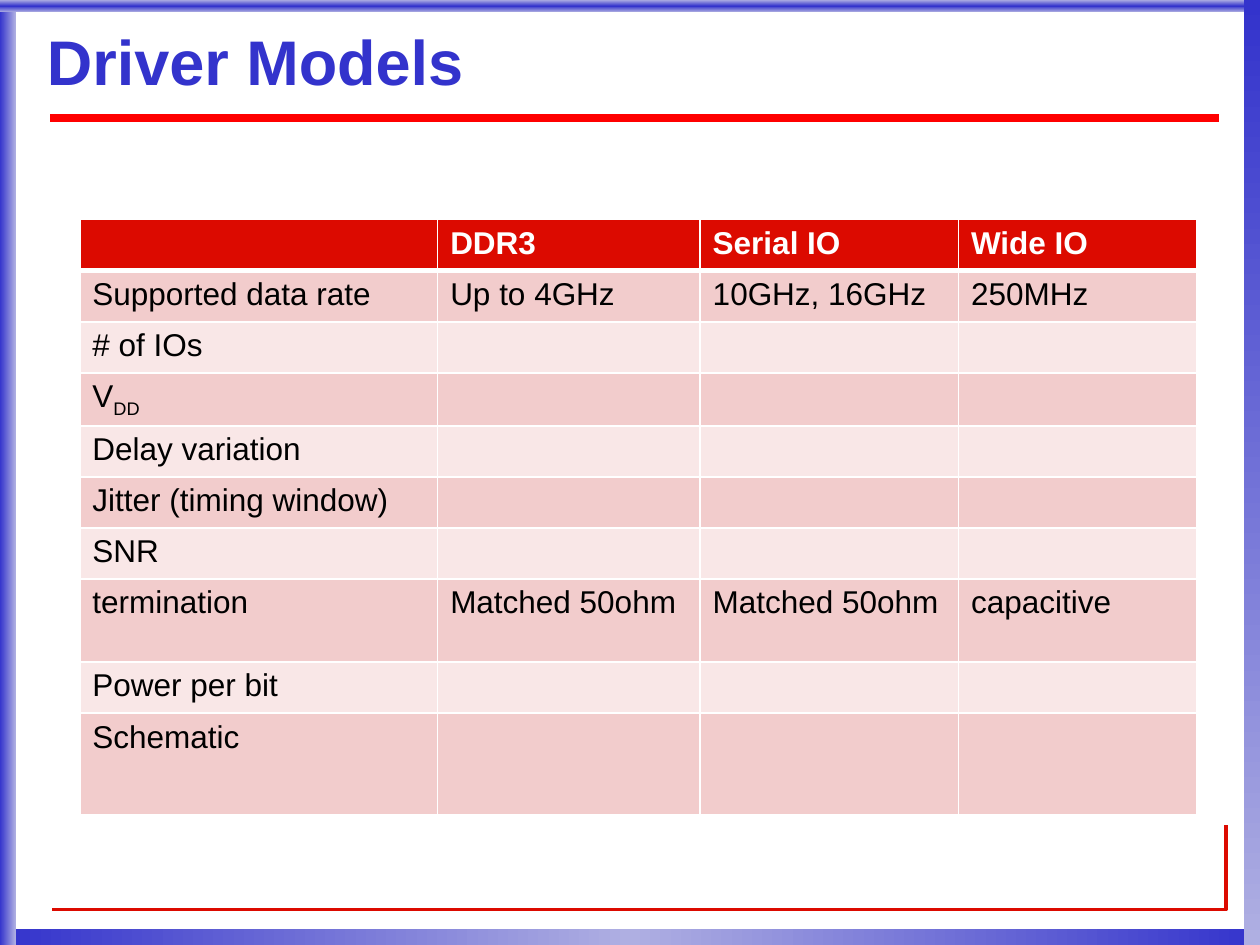
from typing import NamedTuple

from lxml.etree import SubElement
from pptx import Presentation
from pptx.dml.color import RGBColor
from pptx.enum.shapes import MSO_CONNECTOR, MSO_SHAPE
from pptx.enum.text import MSO_ANCHOR, PP_ALIGN
from pptx.oxml import parse_xml
from pptx.oxml.ns import nsdecls, qn
from pptx.util import Pt

COLORS = {
    "blue": "3333CC", "pale": "AFAFE2", "rule": "FF0000", "red": "DC0A00",
    "dark_band": "F2CCCC", "light_band": "F9E7E7",
    "white": "FFFFFF", "black": "000000", "shadow": "B2B2B2",
}
FONT = "Arial"
WIDTH, HEIGHT = 720, 540


class Bar(NamedTuple):
    left: float
    top: float
    width: float
    height: float
    stops: tuple[str, ...]
    angle: int  # counter-clockwise degrees


class Row(NamedTuple):
    texts: tuple[str, ...]  # an underscore starts a subscript
    height: float = 29.2


BARS = [
    Bar(0, 531, WIDTH, 9, ("blue", "pale", "blue"), 0),
    Bar(0, 0, 9, HEIGHT, ("blue", "pale"), 0),
    Bar(0, 0, WIDTH, 7, ("pale", "blue", "pale"), 270),
    Bar(711, 0, 9, HEIGHT, ("blue", "pale"), 270),
]
COLUMN_WIDTHS = [204.5, 150, 147.6, 136.3]
ROWS = [
    Row(("", "DDR3", "Serial IO", "Wide IO")),
    Row(("Supported data rate", "Up to 4GHz", "10GHz, 16GHz", "250MHz")),
    Row(("# of IOs",)),
    Row(("V_DD",)),
    Row(("Delay variation",)),
    Row(("Jitter (timing window)",)),
    Row(("SNR",)),
    Row(("termination", "Matched 50ohm", "Matched 50ohm", "capacitive"), 47.4),
    Row(("Power per bit",)),
    Row(("Schematic",), 58.3),
]


def rgb(name: str) -> RGBColor:
    return RGBColor.from_string(COLORS[name])


def format_run(run, size: float, color: str, bold: bool) -> None:
    run.font.name = FONT
    run.font.size = Pt(size)
    run.font.bold = bold
    run.font.color.rgb = rgb(color)


def draw_bar(slide, bar: Bar) -> None:
    shape = slide.shapes.add_shape(
        MSO_SHAPE.RECTANGLE, Pt(bar.left), Pt(bar.top), Pt(bar.width), Pt(bar.height))
    shape.shadow.inherit = False
    shape.line.fill.background()
    shape.fill.gradient()
    shape.fill.gradient_angle = bar.angle
    stop_list = shape._element.spPr.find(qn("a:gradFill")).find(qn("a:gsLst"))
    for stop in list(stop_list):
        stop_list.remove(stop)
    for index, color in enumerate(bar.stops):
        position = 100000 * index // (len(bar.stops) - 1)
        stop = SubElement(stop_list, qn("a:gs"), pos=str(position))
        SubElement(stop, qn("a:srgbClr"), val=COLORS[color])


def draw_title(slide, text: str) -> None:
    title = slide.shapes.title
    title.left, title.top, title.width, title.height = Pt(26.8), Pt(10.8), Pt(669.6), Pt(53)
    frame = title.text_frame
    frame.text = text
    frame.word_wrap = True
    frame.vertical_anchor = MSO_ANCHOR.MIDDLE
    frame.margin_left = frame.margin_top = frame.margin_right = frame.margin_bottom = 0
    paragraph = frame.paragraphs[0]
    paragraph.alignment = PP_ALIGN.LEFT
    paragraph.line_spacing = 0.87
    run = paragraph.runs[0]
    format_run(run, 36, "blue", True)
    # Text shadow follows the fill in the run properties
    run._r.rPr.find(qn("a:solidFill")).addnext(parse_xml(
        f'<a:effectLst {nsdecls("a")}><a:outerShdw dist="35921" dir="2700000">'
        f'<a:srgbClr val="{COLORS["shadow"]}"/></a:outerShdw></a:effectLst>'))


def draw_rule(slide) -> None:
    rule = slide.shapes.add_connector(
        MSO_CONNECTOR.STRAIGHT, Pt(28.6), Pt(67.5), Pt(696.7), Pt(67.5))
    rule.line.color.rgb = rgb("rule")
    rule.line.width = Pt(4.5)
    SubElement(rule._element.spPr, qn("a:effectLst"))


def draw_corner(slide) -> None:
    builder = slide.shapes.build_freeform(Pt(700.5), Pt(471.6))
    builder.add_line_segments([(Pt(700.5), Pt(519.7)), (Pt(30), Pt(519.7))], close=False)
    corner = builder.convert_to_shape()
    corner.shadow.inherit = False
    corner.fill.background()
    corner.line.color.rgb = rgb("red")
    corner.line.width = Pt(2.25)


def set_borders(cell, top: float, bottom: float) -> None:
    properties = cell._tc.get_or_add_tcPr()
    for index, (side, width) in enumerate(
            [("lnL", 1), ("lnR", 1), ("lnT", top), ("lnB", bottom)]):
        properties.insert(index, parse_xml(
            f'<a:{side} {nsdecls("a")} w="{Pt(width)}"><a:solidFill>'
            f'<a:srgbClr val="{COLORS["white"]}"/></a:solidFill></a:{side}>'))


def fill_cell(cell, text: str, row_index: int) -> None:
    header = row_index == 0
    band = "dark_band" if row_index % 2 else "light_band"
    cell.fill.solid()
    cell.fill.fore_color.rgb = rgb("red" if header else band)
    set_borders(cell, top=3 if row_index == 1 else 1, bottom=3 if header else 1)
    base, _, subscript = text.partition("_")
    paragraph = cell.text_frame.paragraphs[0]
    paragraph.font.size = Pt(18)
    if base:
        paragraph.text = base
    if subscript:
        run = paragraph.add_run()
        run.text = subscript
        run.font._element.set("baseline", "-25000")
    for run in paragraph.runs:
        format_run(run, 18, "white" if header else "black", header)


def draw_table(slide) -> None:
    table = slide.shapes.add_table(
        len(ROWS), len(COLUMN_WIDTHS), Pt(45.6), Pt(125.5),
        Pt(sum(COLUMN_WIDTHS)), Pt(sum(row.height for row in ROWS))).table
    for column, width in zip(table.columns, COLUMN_WIDTHS):
        column.width = Pt(width)
    for row_index, row in enumerate(ROWS):
        table.rows[row_index].height = Pt(row.height)
        for column_index in range(len(COLUMN_WIDTHS)):
            text = row.texts[column_index] if column_index < len(row.texts) else ""
            fill_cell(table.cell(row_index, column_index), text, row_index)


def main() -> None:
    presentation = Presentation()
    presentation.slide_width, presentation.slide_height = Pt(WIDTH), Pt(HEIGHT)
    slide = presentation.slides.add_slide(presentation.slide_layouts[5])

    # Frame
    for bar in BARS:
        draw_bar(slide, bar)
    draw_rule(slide)
    draw_corner(slide)

    # Content
    draw_title(slide, "Driver Models")
    draw_table(slide)
    presentation.save("out.pptx")


if __name__ == "__main__":
    main()
